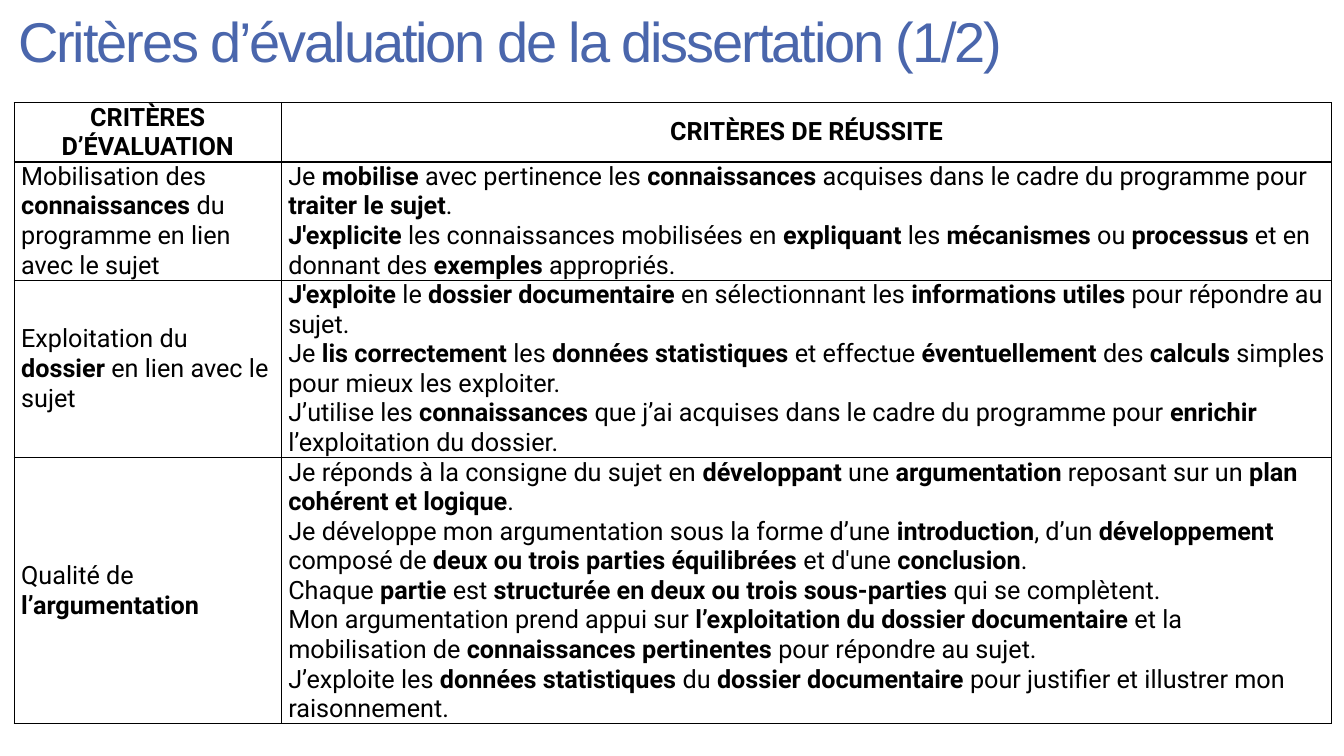
import lxml.etree
import pptx
import pptx.dml.color
import pptx.enum.text
import pptx.oxml.ns
import pptx.util

Inches = pptx.util.Inches
Pt = pptx.util.Pt
ALIGN = pptx.enum.text.PP_ALIGN
ANCHOR = pptx.enum.text.MSO_ANCHOR
BLACK = pptx.dml.color.RGBColor(0x00, 0x00, 0x00)
WHITE = pptx.dml.color.RGBColor(0xFF, 0xFF, 0xFF)
BLUE = pptx.dml.color.RGBColor(0x4A, 0x66, 0xAC)

TITLE = "Critères d’évaluation de la dissertation (1/2)"
COLUMN_WIDTHS = [2.65, 10.42]
ROW_HEIGHTS = [0.58, 1.17, 1.76, 2.64]
CRITERIA = [
    (["**CRITÈRES D’ÉVALUATION**"], ["**CRITÈRES DE RÉUSSITE**"]),
    (
        ["Mobilisation des **connaissances** du programme en lien avec le sujet"],
        [
            "Je **mobilise** avec pertinence les **connaissances** acquises dans le cadre "
            "du programme pour **traiter le sujet**.",
            "**J'explicite** les connaissances mobilisées en **expliquant** les "
            "**mécanismes** ou **processus** et en donnant des **exemples** appropriés.",
        ],
    ),
    (
        ["Exploitation du **dossier** en lien avec le sujet"],
        [
            "**J'exploite** le **dossier documentaire** en sélectionnant les "
            "**informations utiles** pour répondre au sujet.",
            "Je **lis correctement** les **données statistiques** et effectue "
            "**éventuellement** des **calculs** simples pour mieux les exploiter.",
            "J’utilise les **connaissances** que j’ai acquises dans le cadre du programme "
            "pour **enrichir** l’exploitation du dossier.",
        ],
    ),
    (
        ["Qualité de **l’argumentation**"],
        [
            "Je réponds à la consigne du sujet en **développant** une **argumentation** "
            "reposant sur un **plan cohérent et logique**.",
            "Je développe mon argumentation sous la forme d’une **introduction**, d’un "
            "**développement** composé de **deux ou trois parties équilibrées** et d'une "
            "**conclusion**.",
            "Chaque **partie** est **structurée en deux ou trois sous-parties** "
            "qui se complètent.",
            "Mon argumentation prend appui sur **l’exploitation du dossier documentaire** "
            "et la mobilisation de **connaissances pertinentes** pour répondre au sujet.",
            "J’exploite les **données statistiques** du **dossier documentaire** pour "
            "justifier et illustrer mon raisonnement.",
        ],
    ),
]


def set_font(font, name, size, color):
    font.name = name
    font.size = Pt(size)
    font.color.rgb = color


def format_title(title):
    title.left, title.top = Inches(0.13), Inches(-0.45)
    title.width, title.height = Inches(11.78), Inches(1.81)
    frame = title.text_frame
    frame.text = TITLE
    frame.word_wrap = True
    frame.auto_size = pptx.enum.text.MSO_AUTO_SIZE.NONE
    frame.vertical_anchor = ANCHOR.MIDDLE
    frame.margin_left = frame.margin_right = Inches(0.05)
    frame.margin_top = frame.margin_bottom = Inches(0.05)
    para = frame.paragraphs[0]
    para.alignment = ALIGN.LEFT
    para.line_spacing = 0.85
    span = para.runs[0]
    set_font(span.font, "Arial", 40, BLUE)
    span.font.bold = False
    span.font._element.set("spc", "-150")


def add_borders(cell):
    properties = cell._tc.get_or_add_tcPr()
    qn = pptx.oxml.ns.qn
    for side in ("a:lnL", "a:lnR", "a:lnT", "a:lnB"):
        line = lxml.etree.SubElement(properties, qn(side), w=str(Pt(1)))
        fill = lxml.etree.SubElement(line, qn("a:solidFill"))
        lxml.etree.SubElement(fill, qn("a:srgbClr"), val=str(BLACK))


def write_paragraph(para, text, alignment):
    para.alignment = alignment
    set_font(para.font, "Roboto", 18, BLACK)
    for index, part in enumerate(text.split("**")):
        if part:
            span = para.add_run()
            span.text = part
            set_font(span.font, "Roboto", 18, BLACK)
            span.font.bold = index % 2 == 1


def fill_cell(cell, texts, alignment):
    add_borders(cell)
    cell.fill.solid()
    cell.fill.fore_color.rgb = WHITE
    cell.vertical_anchor = ANCHOR.MIDDLE
    cell.margin_left = cell.margin_right = Inches(0.07)
    cell.margin_top = cell.margin_bottom = 0
    frame = cell.text_frame
    for index, text in enumerate(texts):
        para = frame.add_paragraph() if index else frame.paragraphs[0]
        write_paragraph(para, text, alignment)


def add_criteria_table(page):
    table = page.shapes.add_table(
        len(CRITERIA), len(COLUMN_WIDTHS), Inches(0.14), Inches(1.02),
        Inches(sum(COLUMN_WIDTHS)), Inches(sum(ROW_HEIGHTS))).table
    table.first_row = table.horz_banding = False
    for column, width in zip(table.columns, COLUMN_WIDTHS):
        column.width = Inches(width)
    for row_index, (row, height) in enumerate(zip(table.rows, ROW_HEIGHTS)):
        row.height = Inches(height)
        alignment = ALIGN.LEFT if row_index else ALIGN.CENTER
        for cell, texts in zip(row.cells, CRITERIA[row_index]):
            fill_cell(cell, texts, alignment)


def main():
    deck = pptx.Presentation()
    deck.slide_width, deck.slide_height = Inches(13.33), Inches(7.5)
    page = deck.slides.add_slide(deck.slide_layouts[5])
    format_title(page.shapes.title)
    add_criteria_table(page)
    deck.save("out.pptx")


if __name__ == "__main__":
    main()
